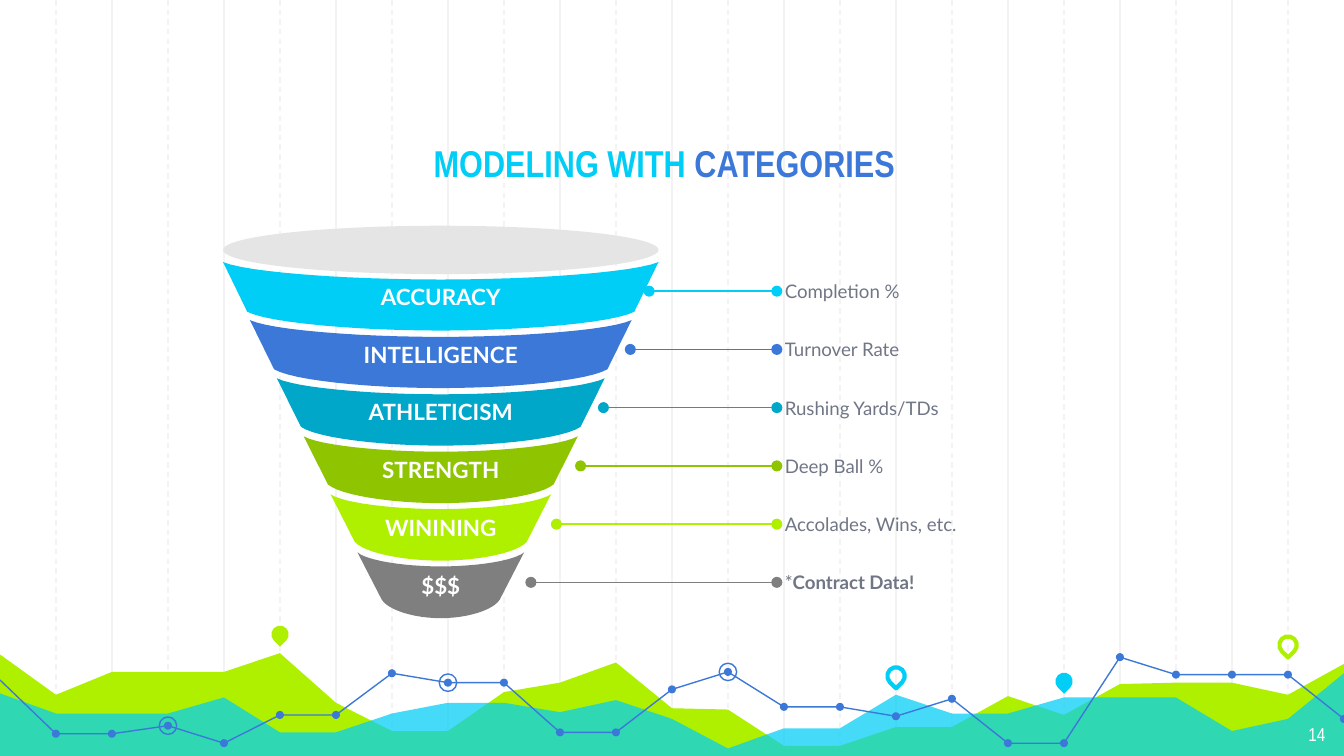
from lxml.etree import SubElement
from pptx import Presentation
from pptx.dml.color import RGBColor
from pptx.enum.dml import MSO_LINE
from pptx.enum.shapes import MSO_CONNECTOR, MSO_SHAPE
from pptx.enum.text import MSO_ANCHOR as Anchor, MSO_AUTO_SIZE, PP_ALIGN as Align
from pptx.oxml.ns import qn
from pptx.util import Emu, Pt

PX = 9144  # one px is a hundredth of an inch
SLIDE_W = 1000
SLIDE_H = SLIDE_W * 9 / 16
COLUMNS = 24

CYAN = RGBColor(0x00, 0xCE, 0xF6)
BLUE = RGBColor(0x3C, 0x78, 0xD8)
TEAL = RGBColor(0x00, 0xA7, 0xC8)
GREEN = RGBColor(0x8E, 0xC4, 0x00)
LIME = RGBColor(0xAF, 0xF0, 0x00)
GRAY = RGBColor(0x7F, 0x7F, 0x7F)
RIM = RGBColor(0xE5, 0xE5, 0xE5)
GRID = RGBColor(0xF3, 0xF3, 0xF3)
SLATE = RGBColor(0x70, 0x76, 0x85)
WHITE = RGBColor(0xFF, 0xFF, 0xFF)

# Heights below the top of the landscape, one per grid column
LIME_HILLS = [1, 31, 14, 14, 14, 0, 37, 58, 58, 29, 22, 7, 41, 42, 69, 69, 55,
              55, 32, 46, 23, 22, 22, 31, 8]
CYAN_HILLS = [30, 45, 45, 45, 33, 59, 59, 45, 37, 37, 44, 35, 49, 71, 56, 56,
              31, 45, 45, 33, 33, 33, 58, 49, 15]
TREND = [20, 60, 60, 54, 67, 46, 46, 15, 22, 22, 59, 59, 27, 14, 40, 40, 47,
         34, 67, 67, 3, 16, 16, 16, 49]
RINGED = [3, 8, 13]
# Column, height, colour, filled
PINS = [(5, -14, LIME, True), (16, 17, CYAN, False),
        (19, 21, CYAN, True), (23, -6, LIME, False)]

# Band label, colour, callout runs (text, bold), callout line start
STAGES = [
    ("ACCURACY", CYAN, [("Completion %", False)], 483),
    ("INTELLIGENCE", BLUE, [("Turnover Rate", False)], 469),
    ("ATHLETICISM", TEAL, [("Rushing Yards/TDs", False)], 449),
    ("STRENGTH", GREEN, [("Deep Ball %", False)], 432),
    ("WININING", LIME, [("Accolades, Wins, etc.", False)], 414),
    ("$$$", GRAY, [("*", False), ("Contract Data!", True)], 395),
]


def px(*lengths):
    return [Emu(round(n * PX)) for n in lengths]


def paint(shape, fill=None, line=None, weight=0.75):
    shape.shadow.inherit = False
    if fill is None:
        shape.fill.background()
    else:
        shape.fill.solid()
        shape.fill.fore_color.rgb = fill
    if line is None:
        shape.line.fill.background()
    else:
        shape.line.color.rgb = line
        shape.line.width = Pt(weight)
    return shape


def add_centred(slide, kind, x, y, size):
    return slide.shapes.add_shape(kind, *px(x - size / 2, y - size / 2, size, size))


def add_outline(slide, points, close=True):
    first, *rest = [px(*point) for point in points]
    builder = slide.shapes.build_freeform(*first, scale=1.0)
    builder.add_line_segments(rest, close=close)
    return builder.convert_to_shape()


def add_line(slide, x1, y1, x2, y2, color):
    line = slide.shapes.add_connector(MSO_CONNECTOR.STRAIGHT, *px(x1, y1, x2, y2))
    line.line.color.rgb = color
    line.line.width = Pt(0.75)
    SubElement(line.element.spPr, qn("a:effectLst"))
    return line


def write(shape, runs, size, font, align=Align.LEFT, anchor=Anchor.MIDDLE, inset=(0, 0)):
    """Fill a shape with runs given as (text, colour, bold)."""
    frame = shape.text_frame
    frame.word_wrap = True
    frame.auto_size = MSO_AUTO_SIZE.NONE
    frame.vertical_anchor = anchor
    frame.margin_left = frame.margin_right = px(inset[0])[0]
    frame.margin_top = frame.margin_bottom = px(inset[1])[0]
    paragraph = frame.paragraphs[0]
    paragraph.alignment = align
    for text, color, bold in runs:
        run = paragraph.add_run()
        run.text = text
        run.font.size, run.font.name = Pt(size), font
        run.font.bold, run.font.color.rgb = bold, color


def add_grid(slide, left, top, width, height):
    for column in range(1, COLUMNS):
        x = left + width * column / COLUMNS
        line = add_line(slide, x, top, x, top + height, GRID)
        if column % 2:
            line.line.dash_style = MSO_LINE.DASH


def add_landscape(slide, left, top, width, height):
    def place(heights):
        return [(left + width * i / COLUMNS, top + y) for i, y in enumerate(heights)]

    # Hills
    floor = [(left + width, top + height), (left, top + height)]
    paint(add_outline(slide, place(LIME_HILLS) + floor), LIME)
    front = paint(add_outline(slide, place(CYAN_HILLS) + floor), CYAN)
    tint = front.element.spPr.find(qn("a:solidFill"))[0]
    SubElement(tint, qn("a:alpha")).set("val", "73000")

    # Trend line with its dots and rings
    trend = place(TREND)
    paint(add_outline(slide, trend, close=False), line=BLUE)
    for x, y in trend[1:]:
        paint(add_centred(slide, MSO_SHAPE.OVAL, x, y, 6), BLUE)
    for column in RINGED:
        paint(add_centred(slide, MSO_SHAPE.OVAL, *trend[column], 13), line=BLUE)

    # Map pins
    for column, y, color, filled in PINS:
        pin = add_centred(slide, MSO_SHAPE.TEAR, left + width * column / COLUMNS, top + y, 13)
        pin.rotation = 135
        if filled:
            paint(pin, color)
        else:
            paint(pin, line=color, weight=2.25)


def bowl(center, y, half, sag, steps=12):
    """Points of a sagging edge, from left to right."""
    right = []
    for i in range(steps + 1):
        t = i / steps
        u = 1 - t
        across = 3 * u * u * t * 0.44 + 3 * u * t * t * 0.89 + t ** 3
        drop = u ** 3 + 3 * u * u * t + 3 * u * t * t * 0.58
        right.append((half * across, y + sag * drop))
    return ([(center - dx, dy) for dx, dy in reversed(right)]
            + [(center + dx, dy) for dx, dy in right[1:]])


def add_funnel(slide, left, top, width, height):
    center = left + width / 2
    band_top, pitch = 27, 43.2
    band_height = height - band_top - pitch * (len(STAGES) - 1)
    for i, (label, color, _, _) in enumerate(STAGES):
        y, half = top + band_top + pitch * i, width / 2 - 20 * i
        upper = bowl(center, y, half, 13 - i / 2)
        lower = bowl(center, y + band_height - 14 - 0.4 * (i - 5), half - 18, 14)
        band = paint(add_outline(slide, upper + lower[::-1]), color)
        write(band, [(label, WHITE, True)], 12, "Lato", Align.CENTER, inset=(7, 4))
    rim = slide.shapes.add_shape(MSO_SHAPE.OVAL, *px(left, top, width, 36))
    paint(rim, RIM)


def add_callouts(slide, left, top, width, height):
    pitch = height / len(STAGES)
    for i, (_, color, parts, start) in enumerate(STAGES):
        y = top + pitch * (i + 0.5)
        line = add_line(slide, start, y, left - 6, y, color)
        stroke = line.element.spPr.find(qn("a:ln"))
        for end in ("a:headEnd", "a:tailEnd"):
            SubElement(stroke, qn(end)).set("type", "oval")
        note = slide.shapes.add_textbox(*px(left, y - 15.5, width, 31))
        write(note, [(text, SLATE, bold) for text, bold in parts], 10, "Lato")


def add_title(slide, left, top, width, height):
    title = slide.shapes.title
    title.left, title.top, title.width, title.height = px(left, top, width, height)
    write(title, [("MODELING WITH ", CYAN, True), ("CATEGORIES ", BLUE, True)],
          20, "Arial Narrow", Align.CENTER, Anchor.BOTTOM, (10, 10))
    title.element.getparent().append(title.element)  # in front of the grid


def add_page_number(slide, left, top, width, height):
    number = slide.shapes.add_textbox(*px(left, top, width, height))
    write(number, [("14", WHITE, False)], 10, "Arial Narrow", Align.RIGHT, Anchor.TOP, (10, 10))


def main():
    deck = Presentation()
    deck.slide_width, deck.slide_height = px(SLIDE_W, SLIDE_H)
    slide = deck.slides.add_slide(deck.slide_layouts[5])
    add_grid(slide, 0, 0, SLIDE_W, SLIDE_H)
    add_landscape(slide, 0, 486, SLIDE_W, 78)
    add_title(slide, 115, 70, 765, 78)
    add_page_number(slide, 936, 528, 60, 35)
    add_funnel(slide, 166, 168, 324, 292)
    add_callouts(slide, 584, 195, 250, 260)
    deck.save("out.pptx")


if __name__ == "__main__":
    main()
